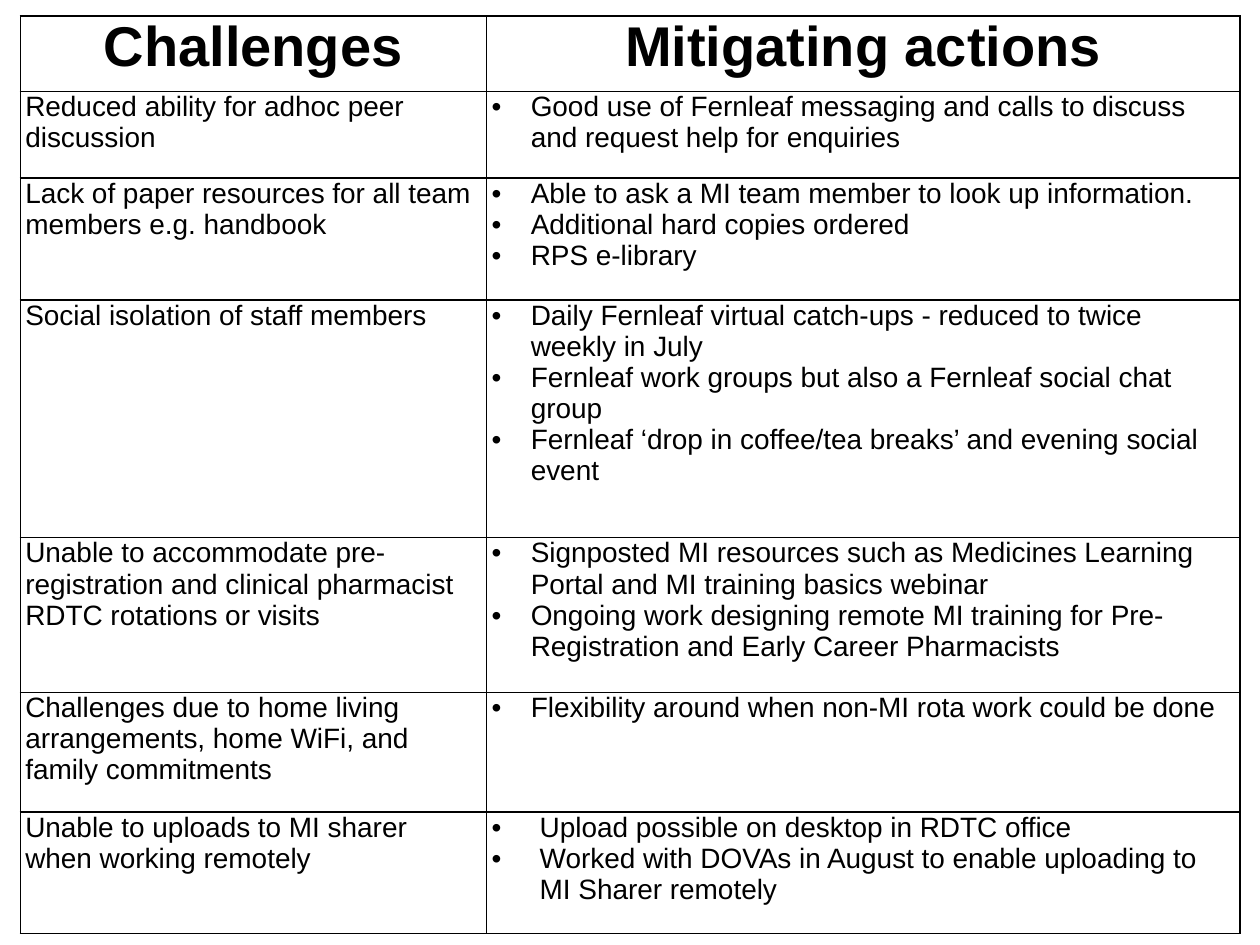
import pptx
import pptx.util
import pptx.dml.color
import pptx.enum.text
import pptx.oxml
import pptx.oxml.ns
from pptx.util import Cm, Pt


def colour(value):
    return pptx.dml.color.RGBColor.from_string(value)


def add_xml(parent, markup):
    namespace = pptx.oxml.ns.nsdecls("a")
    parent.append(pptx.oxml.parse_xml(markup.replace(" ", f" {namespace} ", 1)))


headings = ["Challenges", "Mitigating actions"]
column_widths = [9.4, 15.19]
heading_height = 1.52
bullet_indent = 0.79
wide_indent = 0.97
challenges = [
    (1.75, bullet_indent, "Reduced ability for adhoc peer discussion", [
        "Good use of Fernleaf messaging and calls to discuss and request help for enquiries",
    ]),
    (2.46, bullet_indent, "Lack of paper resources for all team members e.g. handbook", [
        "Able to ask a MI team member to look up information.",
        "Additional hard copies ordered",
        "RPS e-library",
    ]),
    (4.79, bullet_indent, "Social isolation of staff members", [
        "Daily Fernleaf virtual catch-ups - reduced to twice weekly in July",
        "Fernleaf work groups but also a Fernleaf social chat group",
        "Fernleaf ‘drop in coffee/tea breaks’ and evening social event",
    ]),
    (3.12, bullet_indent,
     "Unable to accommodate pre-registration and clinical pharmacist RDTC rotations or visits", [
         "Signposted MI resources such as Medicines Learning Portal and MI training basics webinar",
         "Ongoing work designing remote MI training for Pre-Registration and Early Career Pharmacists",
     ]),
    (2.41, bullet_indent,
     "Challenges due to home living arrangements, home WiFi, and family commitments", [
         "Flexibility around when non-MI rota work could be done",
     ]),
    (2.45, wide_indent, "Unable to uploads to MI sharer when working remotely", [
        "Upload possible on desktop in RDTC office",
        "Worked with DOVAs in August to enable uploading to MI Sharer remotely",
    ]),
]
row_heights = [heading_height] + [challenge[0] for challenge in challenges]
heading_font = {"name": "Arial", "size": Pt(32), "bold": True}
body_font = {"name": "Arial", "size": Pt(16), "bold": False}
cell_format = {"margin_left": Cm(0.1), "margin_right": Cm(0.1),
               "margin_top": 0, "margin_bottom": 0}

deck = pptx.Presentation()
deck.slide_width = Cm(25.4)
deck.slide_height = Cm(19.05)
slide = deck.slides.add_slide(deck.slide_layouts[6])
actions_table = slide.shapes.add_table(
    len(row_heights), len(column_widths), Cm(0.41), Cm(0.32),
    Cm(sum(column_widths)), Cm(sum(row_heights))).table
actions_table.horz_banding = False
for column, width in zip(actions_table.columns, column_widths):
    column.width = Cm(width)
for row, height in zip(actions_table.rows, row_heights):
    row.height = Cm(height)

contents = [([heading], 0, heading_font) for heading in headings]
for height, indent, challenge, actions in challenges:
    contents += [([challenge], 0, body_font), (actions, indent, body_font)]

for cell, (lines, indent, font_format) in zip(actions_table.iter_cells(), contents):
    for attribute, value in cell_format.items():
        setattr(cell, attribute, value)
    cell.text_frame.text = "\n".join(lines)
    for paragraph in cell.text_frame.paragraphs:
        if indent:
            properties = paragraph._p.get_or_add_pPr()
            properties.set("marL", str(Cm(indent)))
            properties.set("indent", str(-Cm(indent)))
            add_xml(properties, '<a:buFont typeface="Arial"/>')
            add_xml(properties, '<a:buChar char="•"/>')
        if font_format is heading_font:
            paragraph.alignment = pptx.enum.text.PP_ALIGN.CENTER
        for run in paragraph.runs:
            for attribute, value in font_format.items():
                setattr(run.font, attribute, value)
            run.font.color.rgb = colour("000000")
    for side in ["lnL", "lnR", "lnT", "lnB"]:
        add_xml(cell._tc.get_or_add_tcPr(),
                f'<a:{side} w="{Pt(1)}"><a:solidFill><a:srgbClr val="000000"/>'
                f'</a:solidFill></a:{side}>')
    cell.fill.background()

deck.save("out.pptx")
